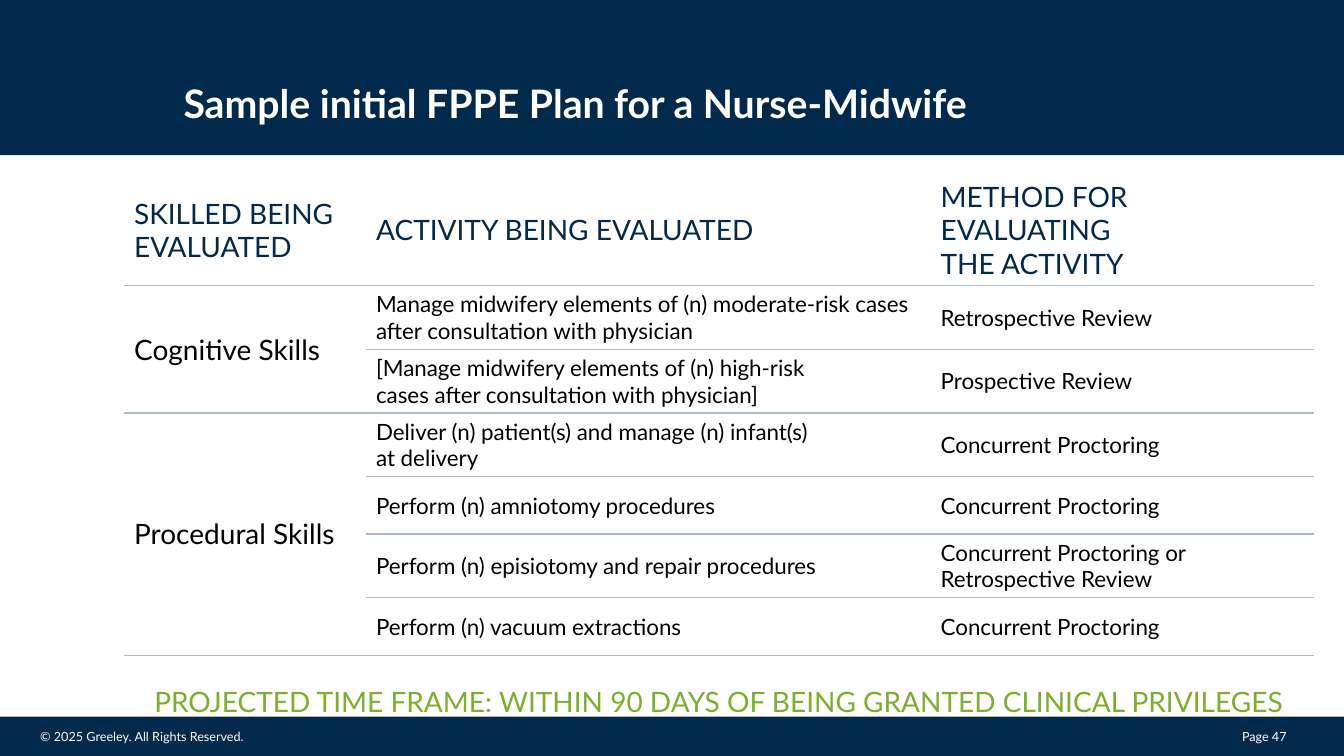
from dataclasses import dataclass

from lxml.etree import SubElement
from pptx import Presentation
from pptx.dml.color import RGBColor
from pptx.enum.shapes import MSO_SHAPE
from pptx.enum.text import MSO_ANCHOR, PP_ALIGN
from pptx.oxml import parse_xml
from pptx.oxml.ns import nsdecls, qn
from pptx.util import Inches, Pt


@dataclass(frozen=True)
class Theme:
    font: str = "Lato"
    navy: str = "00294C"
    white: str = "FFFFFF"
    black: str = "000000"
    green: str = "7CAF2A"
    rule: str = "ADB9CA"
    title_size: int = 28
    heading_size: int = 20
    body_size: int = 16
    footer_size: int = 9
    plain_table: str = "{2D5ABB26-0587-4C30-8999-92F81FD0307C}"


class SlideBuilder:
    """Draws styled elements on one page."""

    def __init__(self, page, theme):
        self.page = page
        self.theme = theme

    def add_text(self, frame, text, size, color, bold=False, align=PP_ALIGN.LEFT):
        para = frame.paragraphs[0]
        para.alignment = align
        for index, line in enumerate(text.split("\n")):
            if index:
                para.add_line_break()
            span = para.add_run()
            span.text = line
            span.font.name = self.theme.font
            span.font.size = Pt(size)
            span.font.bold = bold
            span.font.color.rgb = RGBColor.from_string(color)
        return para

    def bar(self, top, height):
        shape = self.page.shapes.add_shape(
            MSO_SHAPE.RECTANGLE, 0, Inches(top), Inches(13.33), Inches(height))
        shape.shadow.inherit = False
        shape.fill.solid()
        shape.fill.fore_color.rgb = RGBColor.from_string(self.theme.navy)
        shape.line.fill.background()

    def footer(self, text, left, width):
        box = self.page.shapes.add_textbox(
            Inches(left), Inches(7.18), Inches(width), Inches(0.26))
        box.text_frame.word_wrap = True
        self.add_text(box.text_frame, text, self.theme.footer_size, self.theme.white)

    def title(self, text):
        title = self.page.shapes.title
        self.page.shapes.element.append(title.element)
        title.left, title.top = Inches(1.82), Inches(0)
        title.width, title.height = Inches(11.21), Inches(1.25)
        frame = title.text_frame
        frame.margin_left = frame.margin_right = 0
        frame.margin_top = frame.margin_bottom = 0
        frame.vertical_anchor = MSO_ANCHOR.BOTTOM
        para = self.add_text(frame, text, self.theme.title_size, self.theme.white, bold=True)
        para.line_spacing = 1.08

    def table(self, left, top, widths, heights):
        table = self.page.shapes.add_table(
            len(heights), len(widths), Inches(left), Inches(top),
            Inches(sum(widths)), Inches(sum(heights))).table
        table.first_row = table.horz_banding = False
        style = next(self.page.shapes.element.iter(qn("a:tableStyleId")))
        style.text = self.theme.plain_table
        for column, width in zip(table.columns, widths):
            column.width = Inches(width)
        for row, height in zip(table.rows, heights):
            row.height = Inches(height)
        return table

    def cell(self, cell, text, size, color, edges, align=PP_ALIGN.LEFT):
        cell.vertical_anchor = MSO_ANCHOR.MIDDLE
        cell.fill.background()
        self.add_text(cell.text_frame, text, size, color, align=align)
        properties = cell._tc.get_or_add_tcPr()
        for index, edge in enumerate(edges):
            line = parse_xml(f'<a:{edge} {nsdecls("a")} w="{int(Pt(1))}"/>')
            fill = SubElement(line, qn("a:solidFill"))
            SubElement(fill, qn("a:srgbClr"), val=self.theme.rule)
            properties.insert(index, line)


HEADINGS = ["SKILLED BEING EVALUATED", "ACTIVITY BEING EVALUATED",
            "METHOD FOR EVALUATING \nTHE ACTIVITY"]
SKILLS = {
    "Cognitive Skills": [
        ("Manage midwifery elements of (n) moderate-risk cases after consultation with physician",
         "Retrospective Review"),
        ("[Manage midwifery elements of (n) high-risk \ncases after consultation with physician]",
         "Prospective Review"),
    ],
    "Procedural Skills": [
        ("Deliver (n) patient(s) and manage (n) infant(s) \nat delivery", "Concurrent Proctoring"),
        ("Perform (n) amniotomy procedures", "Concurrent Proctoring"),
        ("Perform (n) episiotomy and repair procedures",
         "Concurrent Proctoring or Retrospective Review"),
        ("Perform (n) vacuum extractions", "Concurrent Proctoring"),
    ],
}
TIME_FRAME = "PROJECTED TIME FRAME: WITHIN 90 DAYS OF BEING GRANTED CLINICAL PRIVILEGES"


def draw_plan(builder):
    theme = builder.theme
    table = builder.table(1.23, 1.73, [2.4, 5.6, 3.8],
                          [0.78, 0.62, 0.62, 0.62, 0.57, 0.62, 0.57, 0.93])
    for column, heading in enumerate(HEADINGS):
        builder.cell(table.cell(0, column), heading, theme.heading_size, theme.navy, ["lnB"])
    row = 1
    for skill, activities in SKILLS.items():
        group = table.cell(row, 0)
        group.merge(table.cell(row + len(activities) - 1, 0))
        builder.cell(group, skill, theme.heading_size, theme.black, ["lnT", "lnB"])
        for texts in activities:
            for column, text in enumerate(texts, start=1):
                builder.cell(table.cell(row, column), text, theme.body_size,
                             theme.black, ["lnT", "lnB"])
            row += 1
    closing = table.cell(row, 0)
    closing.merge(table.cell(row, 2))
    builder.cell(closing, TIME_FRAME, theme.heading_size, theme.green, ["lnT"], PP_ALIGN.CENTER)


def main():
    deck = Presentation()
    deck.slide_width, deck.slide_height = Inches(13.33), Inches(7.5)
    builder = SlideBuilder(deck.slides.add_slide(deck.slide_layouts[5]), Theme())
    builder.bar(7.11, 0.4)
    builder.footer("© 2025 Greeley. All Rights Reserved.", 0.3, 4.48)
    builder.footer("Page 47", 12.22, 1.05)
    builder.bar(0, 1.54)
    builder.title("Sample initial FPPE Plan for a Nurse-Midwife")
    draw_plan(builder)
    deck.save("out.pptx")


if __name__ == "__main__":
    main()
